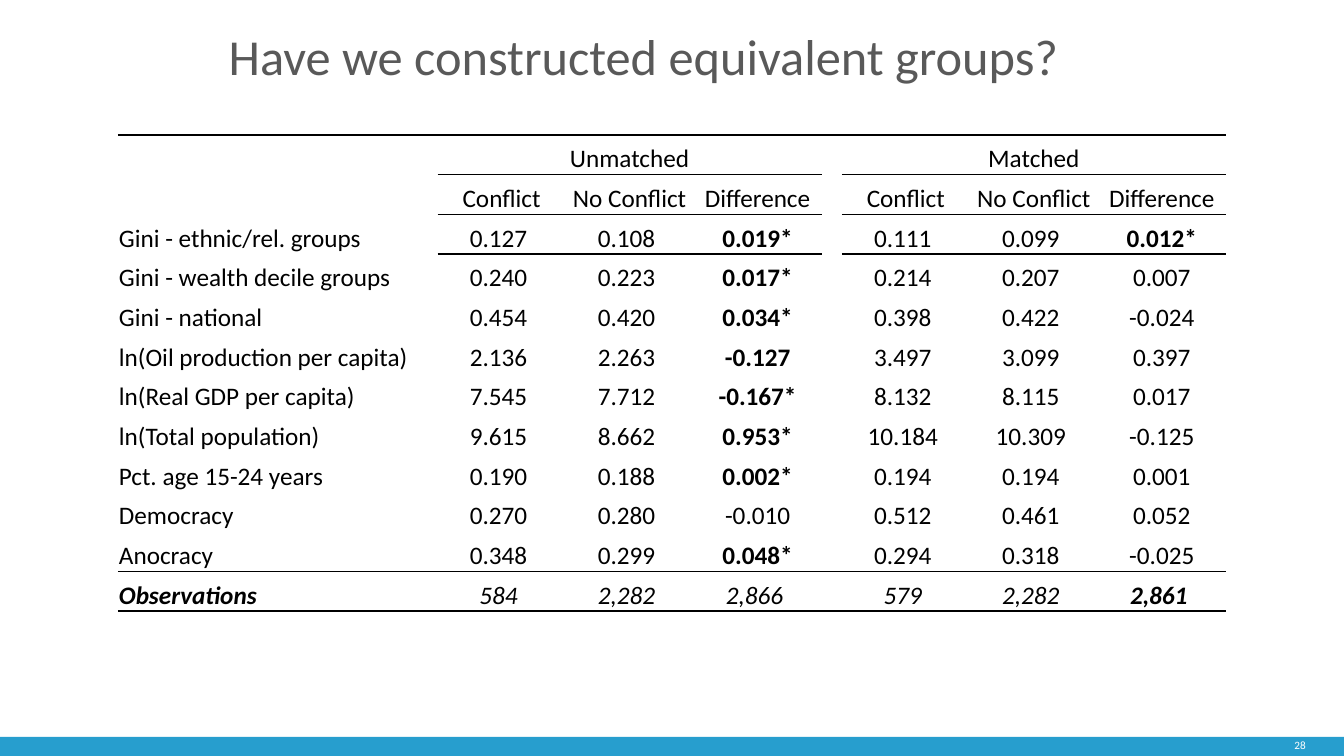
"""Build a slide with a balance table of unmatched and matched groups."""
from lxml.etree import SubElement
from pptx import Presentation
from pptx.dml.color import RGBColor
from pptx.enum.shapes import MSO_SHAPE
from pptx.enum.text import MSO_ANCHOR, PP_ALIGN
from pptx.oxml.ns import qn
from pptx.util import Inches, Pt

COLORS = {"paper": "FFFFFF", "ink": "000000", "title": "595959", "bar": "279ECE"}
FONT = "Calibri"
PLAIN_TABLE_STYLE = "{2D5ABB26-0587-4C30-8999-92F81FD0307C}"

LABEL_WIDTH, VALUE_WIDTH, GAP_WIDTH = 3.17, 1.27, 0.2
COLUMN_WIDTHS = [LABEL_WIDTH] + [VALUE_WIDTH] * 3 + [GAP_WIDTH] + [VALUE_WIDTH] * 3
TABLE_HEIGHT = 4.72
LABEL_COLUMN, GAP_COLUMN = 0, 4
GROUP_STARTS = (1, 5)
DIFFERENCE_COLUMNS = (3, 7)

GROUP_HEADER = ["", "Unmatched", "", "", "", "Matched", "", ""]
MEASURES = ["Conflict", "No Conflict", "Difference"]
RESULTS = [
    ["Gini - ethnic/rel. groups", "0.127", "0.108", "0.019*", "", "0.111", "0.099", "0.012*"],
    ["Gini - wealth decile groups", "0.240", "0.223", "0.017*", "", "0.214", "0.207", "0.007"],
    ["Gini - national", "0.454", "0.420", "0.034*", "", "0.398", "0.422", "-0.024"],
    ["ln(Oil production per capita)", "2.136", "2.263", "-0.127", "", "3.497", "3.099", "0.397"],
    ["ln(Real GDP per capita)", "7.545", "7.712", "-0.167*", "", "8.132", "8.115", "0.017"],
    ["ln(Total population)", "9.615", "8.662", "0.953*", "", "10.184", "10.309", "-0.125"],
    ["Pct. age 15-24 years", "0.190", "0.188", "0.002*", "", "0.194", "0.194", "0.001"],
    ["Democracy", "0.270", "0.280", "-0.010", "", "0.512", "0.461", "0.052"],
    ["Anocracy", "0.348", "0.299", "0.048*", "", "0.294", "0.318", "-0.025"],
    ["Observations", "584", "2,282", "2,866", "", "579", "2,282", "2,861"],
]
ROWS = [GROUP_HEADER, ["", *MEASURES, "", *MEASURES], *RESULTS]
HEADER_ROWS = 2
LAST_ROW = len(ROWS) - 1
BOLD_TEXTS = {"-0.127", "Observations", "2,861"}

VALUE_RULES = {0: 1, 1: 1, 2: 1}
FULL_RULES = {-1: 2, LAST_ROW - 1: 1, LAST_ROW: 2}


def color(name):
    """Return the named colour."""
    return RGBColor.from_string(COLORS[name])


def style_font(font, size, color_name):
    """Set the typeface, size and colour of a font."""
    font.name = FONT
    font.size = Pt(size)
    font.color.rgb = color(color_name)


def add_text(page, text, left, top, width, height, size, color_name, align):
    """Add a one-paragraph text box and return its paragraph."""
    box = page.shapes.add_textbox(Inches(left), Inches(top), Inches(width), Inches(height))
    box.text_frame.word_wrap = True
    para = box.text_frame.paragraphs[0]
    para.text = text
    para.alignment = align
    style_font(para.font, size, color_name)
    return para


def add_footer_bar(page):
    """Add the coloured band along the bottom edge."""
    bar = page.shapes.add_shape(
        MSO_SHAPE.RECTANGLE, Inches(-0.01), Inches(7.31), Inches(13.4), Inches(0.21))
    bar.shadow.inherit = False
    bar.fill.solid()
    bar.fill.fore_color.rgb = color("bar")
    bar.line.fill.background()


def rule_below(row, column):
    """Return the width of the line below a cell, or zero."""
    if row in FULL_RULES:
        return FULL_RULES[row]
    if column in (LABEL_COLUMN, GAP_COLUMN):
        return 0
    return VALUE_RULES.get(row, 0)


def set_border(cell, tag, width):
    """Draw one side of a cell, or hide it when the width is zero."""
    line = SubElement(cell._tc.get_or_add_tcPr(), qn(tag), w=str(Pt(width)))
    if width:
        fill = SubElement(line, qn("a:solidFill"))
        SubElement(fill, qn("a:srgbClr"), val=COLORS["ink"])
    else:
        SubElement(line, qn("a:noFill"))


def fill_cell(cell, row, column):
    """Give a cell its borders, fill, margins and text."""
    set_border(cell, "a:lnT", rule_below(row - 1, column))
    set_border(cell, "a:lnB", rule_below(row, column))
    cell.fill.solid()
    cell.fill.fore_color.rgb = color("paper")

    is_count = row == LAST_ROW
    is_shifted = row >= HEADER_ROWS and column != LABEL_COLUMN and (
        is_count or column not in DIFFERENCE_COLUMNS)
    cell.margin_left = cell.margin_top = Inches(0.01)
    cell.margin_right = Inches(0.07 if is_shifted else 0.01)
    cell.margin_bottom = 0
    cell.vertical_anchor = MSO_ANCHOR.BOTTOM

    text = ROWS[row][column]
    para = cell.text_frame.paragraphs[0]
    para.text = text
    para.alignment = PP_ALIGN.LEFT if column == LABEL_COLUMN else PP_ALIGN.CENTER
    style_font(para.font, 18, "ink")
    para.font.bold = text.endswith("*") or text in BOLD_TEXTS
    para.font.italic = is_count


def add_balance_table(page):
    """Add the table that compares the groups before and after matching."""
    frame = page.shapes.add_table(
        len(ROWS), len(COLUMN_WIDTHS), Inches(1.17), Inches(1.34),
        Inches(sum(COLUMN_WIDTHS)), Inches(TABLE_HEIGHT))
    table = frame.table
    table.first_row = table.horz_banding = False
    table._tbl.tblPr.find(qn("a:tableStyleId")).text = PLAIN_TABLE_STYLE
    for column, width in enumerate(COLUMN_WIDTHS):
        table.columns[column].width = Inches(width)
    for row in range(len(ROWS)):
        table.rows[row].height = Inches(TABLE_HEIGHT / len(ROWS))
        for column in range(len(COLUMN_WIDTHS)):
            fill_cell(table.cell(row, column), row, column)
    for start in GROUP_STARTS:
        table.cell(0, start).merge(table.cell(0, start + len(MEASURES) - 1))


def main():
    """Build the deck and save it."""
    deck = Presentation()
    deck.slide_width, deck.slide_height = Inches(13.33), Inches(7.5)
    page = deck.slides.add_slide(deck.slide_layouts[6])
    add_footer_bar(page)
    add_text(page, "28", 11.74, 7.28, 1.31, 0.24, 8, "paper", PP_ALIGN.RIGHT)
    title = add_text(page, "Have we constructed equivalent groups?",
                     2.17, 0.18, 9, 1.06, 36, "title", PP_ALIGN.LEFT)
    title.line_spacing = Pt(44.8)
    add_balance_table(page)
    deck.save("out.pptx")


if __name__ == "__main__":
    main()
